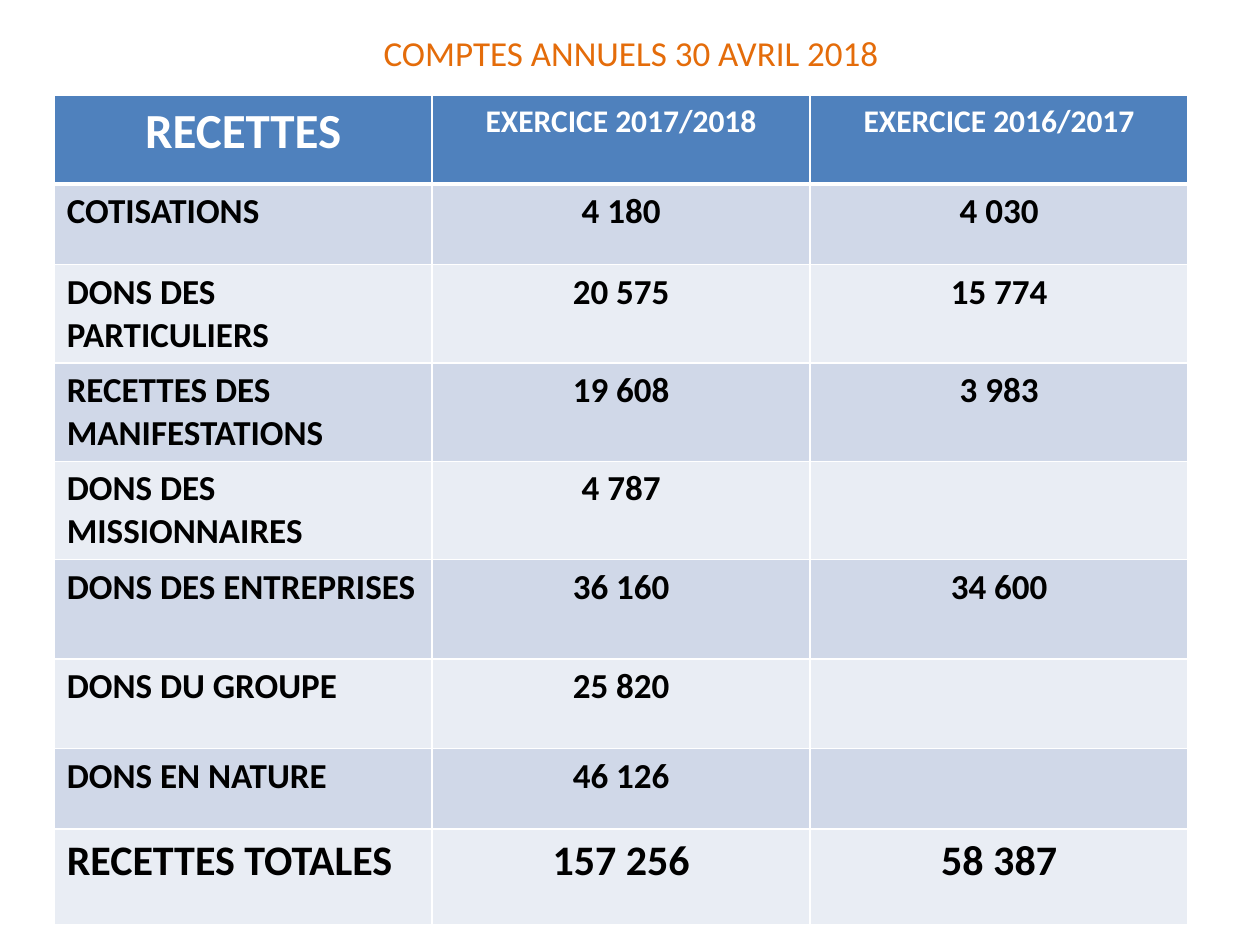
"""Build the annual accounts slide with its table of receipts."""
from typing import NamedTuple

from lxml.etree import SubElement
from pptx import Presentation
from pptx.dml.color import RGBColor
from pptx.enum.text import MSO_ANCHOR as ANCHOR, PP_ALIGN as ALIGN
from pptx.oxml.ns import qn
from pptx.util import Inches, Pt

FONT = "Calibri"
WHITE, BLACK, ORANGE = "FFFFFF", "000000", "E46C0A"
HEADER, BANDS = "4F81BD", ("E9EDF4", "D0D8E8")


class Row(NamedTuple):
    label: str
    current: str
    previous: str
    height: float
    size: int = 20


ROWS = [
    Row("RECETTES", "EXERCICE 2017/2018", "EXERCICE 2016/2017", 0.7, 18),
    Row("COTISATIONS", "4 180", "4 030", 0.64),
    Row("DONS DES PARTICULIERS", "20 575", "15 774", 0.78),
    Row("RECETTES DES MANIFESTATIONS", "19 608", "3 983", 0.78),
    Row("DONS DES MISSIONNAIRES", "4 787", "", 0.78),
    Row("DONS DES ENTREPRISES", "36 160", "34 600", 0.79),
    Row("DONS DU GROUPE", "25 820", "", 0.71),
    Row("DONS EN NATURE", "46 126", "", 0.64),
    Row("RECETTES TOTALES", "157 256", "58 387", 0.76, 24),
]


def rgb(color: str) -> RGBColor:
    """Turn a hex string into a colour."""
    return RGBColor.from_string(color)


def write(tf, text: str, size: int, color: str, align, bold: bool) -> None:
    """Put one formatted paragraph in a text frame."""
    tf.text = text
    p = tf.paragraphs[0]
    p.alignment = align
    for r in p.runs:
        r.font.name = FONT
        r.font.size = Pt(size)
        r.font.bold = bold
        r.font.color.rgb = rgb(color)


def add_borders(cell, top: int, bottom: int) -> None:
    """Draw white borders, with widths in points, around a cell."""
    tc_pr = cell._tc.get_or_add_tcPr()
    widths = {"a:lnL": 1, "a:lnR": 1, "a:lnT": top, "a:lnB": bottom}
    for i, (tag, width) in enumerate(widths.items()):
        ln = tc_pr.makeelement(qn(tag), {"w": str(Pt(width))})
        fill = SubElement(ln, qn("a:solidFill"))
        SubElement(fill, qn("a:srgbClr"), val=WHITE)
        tc_pr.insert(i, ln)


def add_title(s, text: str) -> None:
    """Place and format the slide title."""
    title = s.shapes.title
    title.left, title.top = Inches(0.51), Inches(0)
    title.width, title.height = Inches(9), Inches(0.84)
    write(title.text_frame, text, 20, ORANGE, ALIGN.CENTER, False)
    title.text_frame.vertical_anchor = ANCHOR.MIDDLE


def add_receipts(s, rows: list[Row]) -> None:
    """Add the table of receipts."""
    height = sum(row.height for row in rows)
    table = s.shapes.add_table(len(rows), 3, Inches(0.43), Inches(0.76),
                               Inches(9), Inches(height)).table
    for i, row in enumerate(rows):
        table.rows[i].height = Inches(row.height)
        head = i == 0
        for j, text in enumerate((row.label, row.current, row.previous)):
            cell = table.cell(i, j)
            cell.fill.solid()
            cell.fill.fore_color.rgb = rgb(HEADER if head else BANDS[i % 2])
            add_borders(cell, 3 if i == 1 else 1, 3 if head else 1)
            write(cell.text_frame, text, 28 if head and j == 0 else row.size,
                  WHITE if head else BLACK,
                  ALIGN.CENTER if head or j else ALIGN.LEFT, True)


def main() -> None:
    """Create and save the presentation."""
    prs = Presentation()
    prs.slide_width, prs.slide_height = Inches(10), Inches(7.5)
    s = prs.slides.add_slide(prs.slide_layouts[5])
    add_title(s, "COMPTES ANNUELS 30 AVRIL 2018")
    add_receipts(s, ROWS)
    prs.save("out.pptx")


if __name__ == "__main__":
    main()
